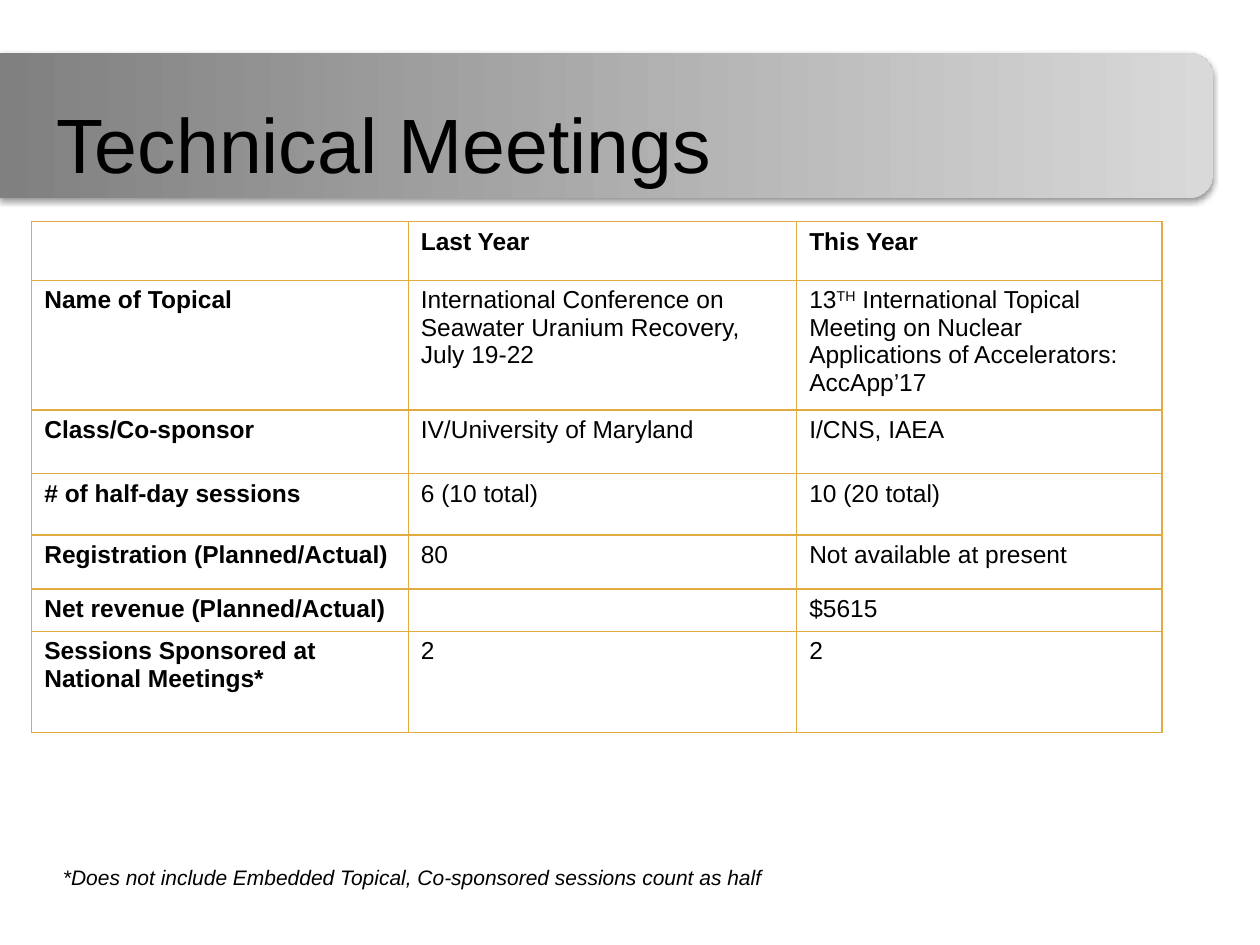
from dataclasses import dataclass

from lxml import etree
from pptx import Presentation
from pptx.dml.color import RGBColor
from pptx.enum import shapes, text
from pptx.oxml import ns
from pptx.util import Cm, Pt

FONT = "Arial"
INK = "000000"
GOLD = "E1AC3F"
COLS = (7.59, 7.83, 7.36)


@dataclass
class Row:
    label: str
    last: str
    now: str
    high: float
    head: bool = False


ROWS = [
    Row("", "Last Year", "This Year", 1.18, head=True),
    Row("Name of Topical",
        "International Conference on Seawater Uranium Recovery, July 19-22",
        "13^TH^ International Topical Meeting on Nuclear Applications of "
        "Accelerators: AccApp’17", 2.62),
    Row("Class/Co-sponsor", "IV/University of Maryland", "I/CNS, IAEA", 1.28),
    Row("# of half-day sessions", "6 (10 total)", "10 (20 total)", 1.23),
    Row("Registration (Planned/Actual)", "80", "Not available at present", 1.09),
    Row("Net revenue (Planned/Actual)", "", "$5615", 0.84),
    Row("Sessions Sponsored at National Meetings*", "2", "2", 2.04),
]


def paint(hue: str) -> RGBColor:
    return RGBColor.from_string(hue)


def write(frame, words: str, size: float, bold=False, italic=False,
          align=text.PP_ALIGN.LEFT) -> None:
    """Fill a text frame; words between carets are raised."""
    frame.word_wrap = True
    para = frame.paragraphs[0]
    para.alignment = align
    if not words:
        para._p.get_or_add_endParaRPr().set("sz", str(int(size * 100)))
        return
    for i, part in enumerate(words.split("^")):
        run = para.add_run()
        run.text = part
        font = run.font
        font.name, font.size = FONT, Pt(size)
        font.bold, font.italic = bold, italic
        font.color.rgb = paint(INK)
        if i % 2:
            run._r.get_or_add_rPr().set("baseline", "30000")


def place(shape, left: float, top: float, wide: float, high: float) -> None:
    shape.left, shape.top = Cm(left), Cm(top)
    shape.width, shape.height = Cm(wide), Cm(high)


def add(parent, tag: str, **attrs: str):
    return etree.SubElement(parent, ns.qn(tag), attrs)


def draw_band(slide) -> None:
    """Add the grey bar, rounded at its right end, behind the title."""
    band = slide.shapes.add_shape(
        shapes.MSO_SHAPE.ROUND_2_SAME_RECTANGLE,
        Cm(10.77), Cm(-9.7), Cm(2.92), Cm(24.46))
    band.rotation = 90
    band.line.fill.background()
    band.fill.gradient()
    band.fill.gradient_angle = 0
    for stop, hue in zip(band.fill.gradient_stops, ("808080", "D9D9D9")):
        stop.color.rgb = paint(hue)
    props = band._element.spPr
    props.find(ns.qn("a:gradFill")).set("rotWithShape", "0")
    shade = add(add(props, "a:effectLst"), "a:outerShdw",
                blurRad=str(Pt(3.1)), dist=str(Pt(1.6)), dir="5400000",
                rotWithShape="0")
    add(add(shade, "a:srgbClr", val=INK), "a:alpha", val="38000")
    slide.shapes._spTree.insert(2, band._element)


def edge(cell) -> None:
    """Draw a thin gold line on all four sides of a cell."""
    props = cell._tc.get_or_add_tcPr()
    for i, side in enumerate(("L", "R", "T", "B")):
        line = etree.Element(ns.qn(f"a:ln{side}"), w=str(Pt(1)))
        add(add(line, "a:solidFill"), "a:srgbClr", val=GOLD)
        props.insert(i, line)


def draw_table(slide, rows: list[Row]) -> None:
    grid = slide.shapes.add_table(
        len(rows), len(COLS), Cm(0.64), Cm(4.47),
        Cm(sum(COLS)), Cm(sum(row.high for row in rows))).table
    grid.first_row = grid.horz_banding = False
    for col, wide in zip(grid.columns, COLS):
        col.width = Cm(wide)
    for y, row in enumerate(rows):
        grid.rows[y].height = Cm(row.high)
        for x, words in enumerate((row.label, row.last, row.now)):
            cell = grid.cell(y, x)
            cell.fill.background()
            edge(cell)
            write(cell.text_frame, words, 14, bold=row.head or x == 0)


def main() -> None:
    deck = Presentation()
    deck.slide_width, deck.slide_height = Cm(25.4), Cm(19.05)
    slide = deck.slides.add_slide(deck.slide_layouts[5])
    draw_band(slide)

    title = slide.shapes.title
    place(title, 0, 1.55, 15.49, 2.67)
    write(title.text_frame, "Technical Meetings", 44,
          align=text.PP_ALIGN.CENTER)

    draw_table(slide, ROWS)

    note = slide.shapes.add_textbox(Cm(1.02), Cm(17.3), Cm(19.35), Cm(1.55))
    write(note.text_frame,
          "*Does not include Embedded Topical, Co-sponsored sessions count as half",
          12, italic=True)
    deck.save("out.pptx")


if __name__ == "__main__":
    main()
